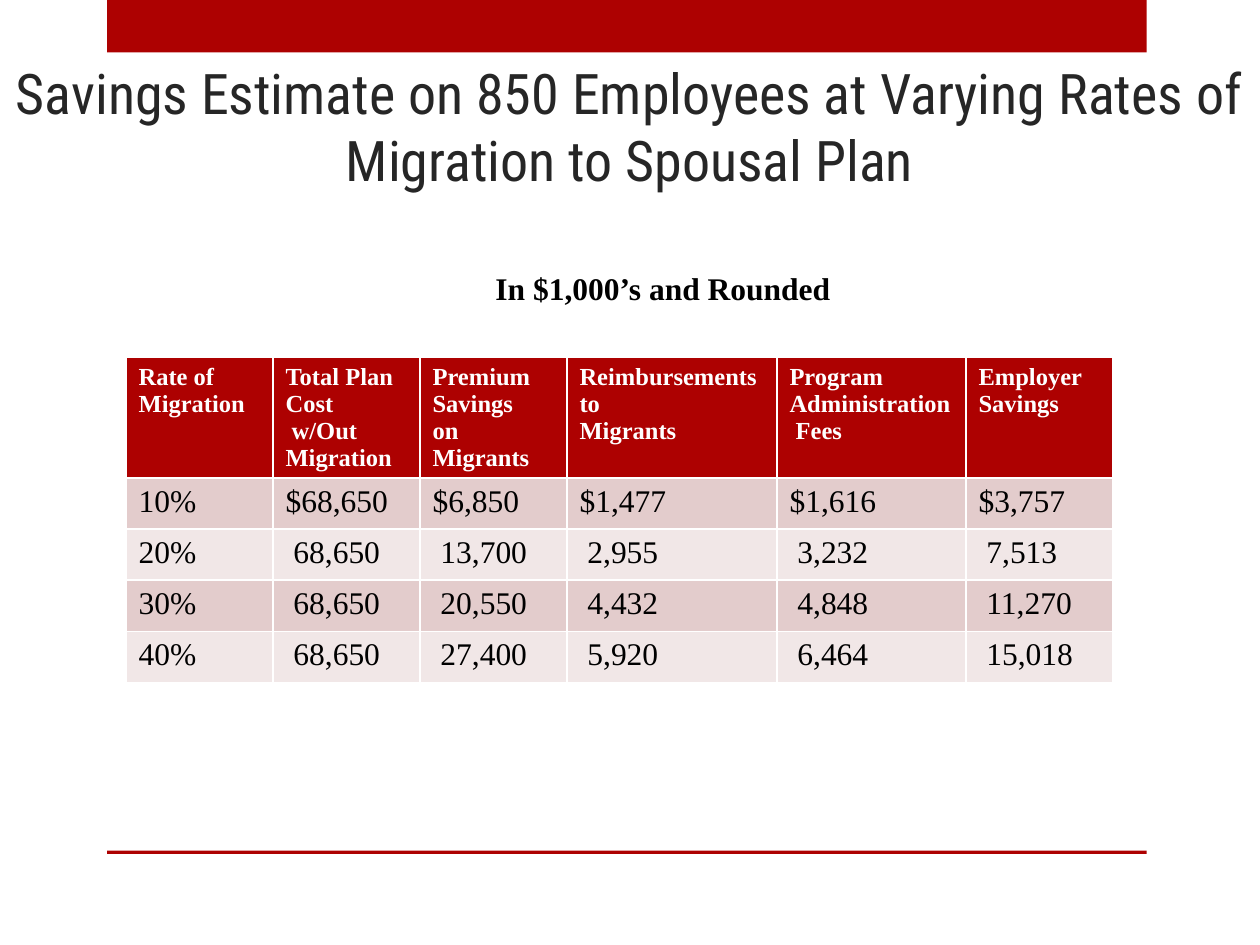
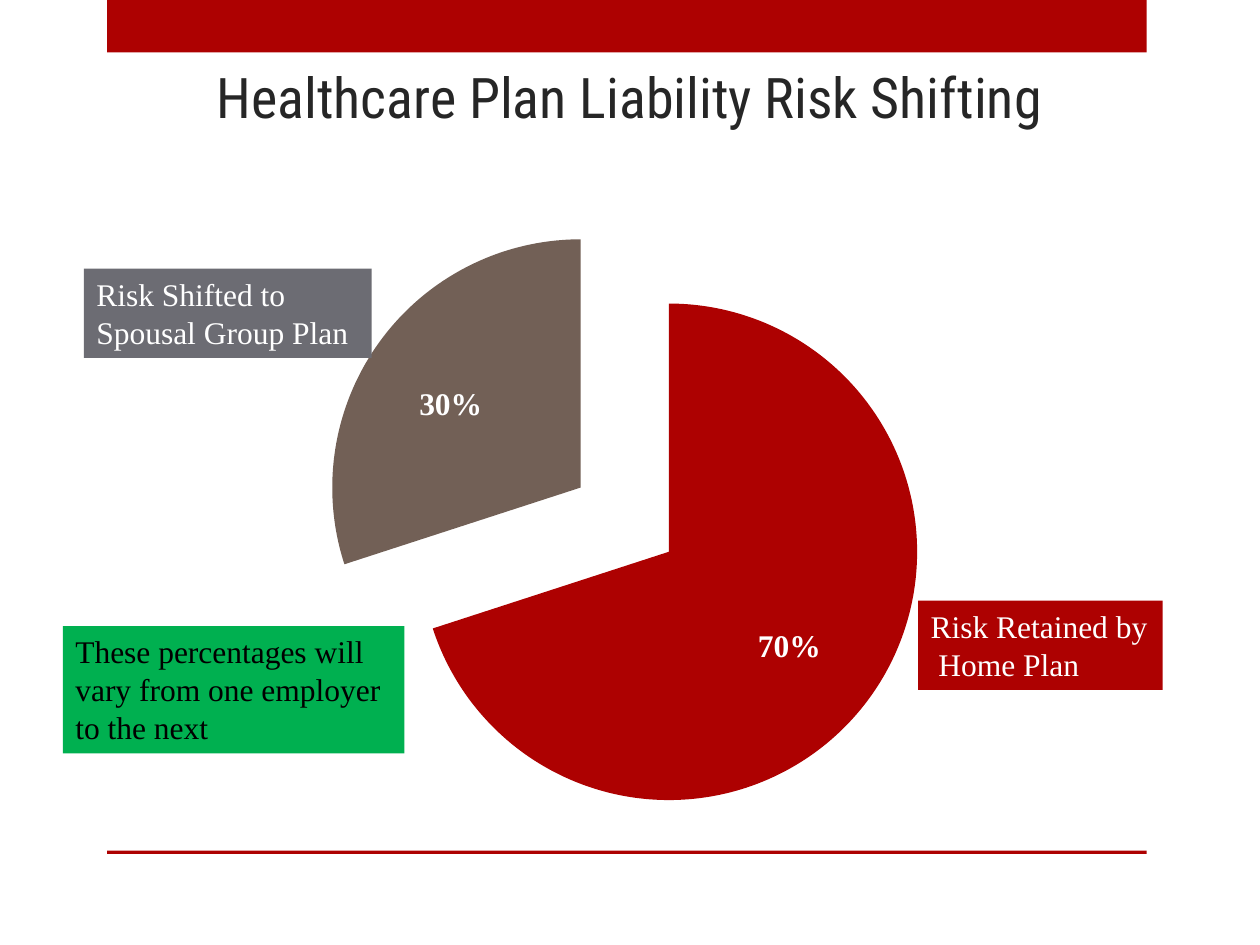
from lxml import etree
from pptx import Presentation
from pptx.chart.data import CategoryChartData
from pptx.dml.color import RGBColor
from pptx.enum.chart import XL_CHART_TYPE as ChartType
from pptx.enum.shapes import MSO_SHAPE as Preset
from pptx.enum.text import MSO_ANCHOR as Anchor, MSO_AUTO_SIZE as AutoSize, PP_ALIGN as Align
from pptx.oxml.ns import qn
from pptx.util import Pt

COLORS = {
    "red": "AD0101",
    "brown": "726056",
    "gray": "6C6C73",
    "green": "00B050",
    "title": "262626",
    "black": "000000",
    "white": "FFFFFF",
    "row_dark": "E3CCCC",
    "row_light": "F1E7E7",
}
TITLE_FONT = "Roboto Condensed"
BODY_FONT = "Times New Roman"


def write_text(text_frame, text, size=18, color="black", font=BODY_FONT, bold=False, align=Align.LEFT):
    text_frame.text = text
    for paragraph in text_frame.paragraphs:
        paragraph.alignment = align
        paragraph.font.size = Pt(size)
        paragraph.font.name = font
        paragraph.font.bold = bold
        paragraph.font.color.rgb = RGBColor.from_string(COLORS[color])


def add_label(slide, text, left, top, width, height, fill=None, **text_format):
    label = slide.shapes.add_textbox(Pt(left), Pt(top), Pt(width), Pt(height))
    if fill:
        label.fill.solid()
        label.fill.fore_color.rgb = RGBColor.from_string(COLORS[fill])
    write_text(label.text_frame, text, **text_format)
    label.text_frame.word_wrap = False
    label.text_frame.auto_size = AutoSize.SHAPE_TO_FIT_TEXT


presentation = Presentation()
presentation.slide_width = Pt(720)
presentation.slide_height = Pt(540)
title_only = presentation.slide_layouts[5]

titles = [
    ("Savings Estimate on 850 Employees at Varying Rates of Migration to Spousal Plan", 78, 36),
    ("Healthcare Plan Liability Risk Shifting", 30, 48),
]
slides = []
for title_text, top, height in titles:
    slide = presentation.slides.add_slide(title_only)
    for band_top, band_height in [(0, 30), (486, 2)]:
        band = slide.shapes.add_shape(Preset.RECTANGLE, Pt(61.2), Pt(band_top), Pt(594), Pt(band_height))
        band.shadow.inherit = False
        band.fill.solid()
        band.fill.fore_color.rgb = RGBColor.from_string(COLORS["red"])
        band.line.fill.background()
    title = slide.shapes.title
    title.left, title.top, title.width, title.height = Pt(0), Pt(top), Pt(720), Pt(height)
    write_text(title.text_frame, title_text, size=32, color="title", font=TITLE_FONT, align=Align.CENTER)
    title.text_frame.vertical_anchor = Anchor.BOTTOM
    title.text_frame.auto_size = AutoSize.NONE
    slides.append(slide)
savings_slide, risk_slide = slides

savings_rows = [
    ["Rate of\nMigration", "Total Plan\nCost\n w/Out\nMigration", "Premium\nSavings\non Migrants",
     "Reimbursements\nto\nMigrants", "Program Administration\n Fees", "Employer Savings"],
    ["10%", "$68,650", "$6,850", "$1,477", "$1,616", "$3,757"],
    ["20%", " 68,650", " 13,700", " 2,955", " 3,232", " 7,513"],
    ["30%", " 68,650", " 20,550", " 4,432", " 4,848", " 11,270"],
    ["40%", " 68,650", " 27,400", " 5,920", " 6,464", " 15,018"],
]
column_widths = [84, 84, 84, 120, 108, 84]
row_heights = [68.6] + [29.2] * 4
table = savings_slide.shapes.add_table(
    len(savings_rows), len(column_widths), Pt(72), Pt(204), Pt(sum(column_widths)), Pt(sum(row_heights))
).table
for column, width in zip(table.columns, column_widths):
    column.width = Pt(width)
for row_index, (row, height, values) in enumerate(zip(table.rows, row_heights, savings_rows)):
    row.height = Pt(height)
    if row_index == 0:
        fill, cell_format = "red", {"size": 14, "color": "white", "bold": True}
    else:
        fill, cell_format = ("row_dark" if row_index % 2 else "row_light"), {}
    for cell, value in zip(row.cells, values):
        cell.fill.solid()
        cell.fill.fore_color.rgb = RGBColor.from_string(COLORS[fill])
        write_text(cell.text_frame, value, **cell_format)

add_label(savings_slide, "In $1,000’s and Rounded", 276, 150, 212.4, 29, bold=True)

chart_data = CategoryChartData()
chart_data.categories = ["1", "2"]
chart_data.add_series("Series 1", [70, 30])
chart = risk_slide.shapes.add_chart(
    ChartType.PIE, Pt(60), Pt(114), Pt(594), Pt(366), chart_data
).chart
chart.has_legend = False
chart.has_title = False
chart.font.size = Pt(18)
chart.font.name = BODY_FONT
chart.font.color.rgb = RGBColor.from_string(COLORS["black"])
pie = chart.plots[0]
pie.vary_by_categories = True
risk_series = pie.series[0]
for point_index, color in enumerate(["red", "brown"]):
    point_fill = risk_series.points[point_index].format.fill
    point_fill.solid()
    point_fill.fore_color.rgb = RGBColor.from_string(COLORS[color])
explosion = etree.Element(qn("c:explosion"), val="22")
risk_series._element.find(qn("c:dPt")).addprevious(explosion)

add_label(risk_slide, "30%", 232.5, 216, 51, 29, color="white", bold=True)
add_label(risk_slide, "Risk Shifted to\nSpousal Group Plan", 48, 153.5, 164.4, 51, fill="gray", color="white")
add_label(risk_slide, "70%", 426, 354, 51, 29, color="white", bold=True)
add_label(risk_slide, "Risk Retained by\n Home Plan", 524.7, 343.2, 139.7, 51, fill="red", color="white")
add_label(risk_slide, "These percentages will\nvary from one employer\nto the next", 36, 357.8, 195.2, 72.7, fill="green")

presentation.save("out.pptx")
